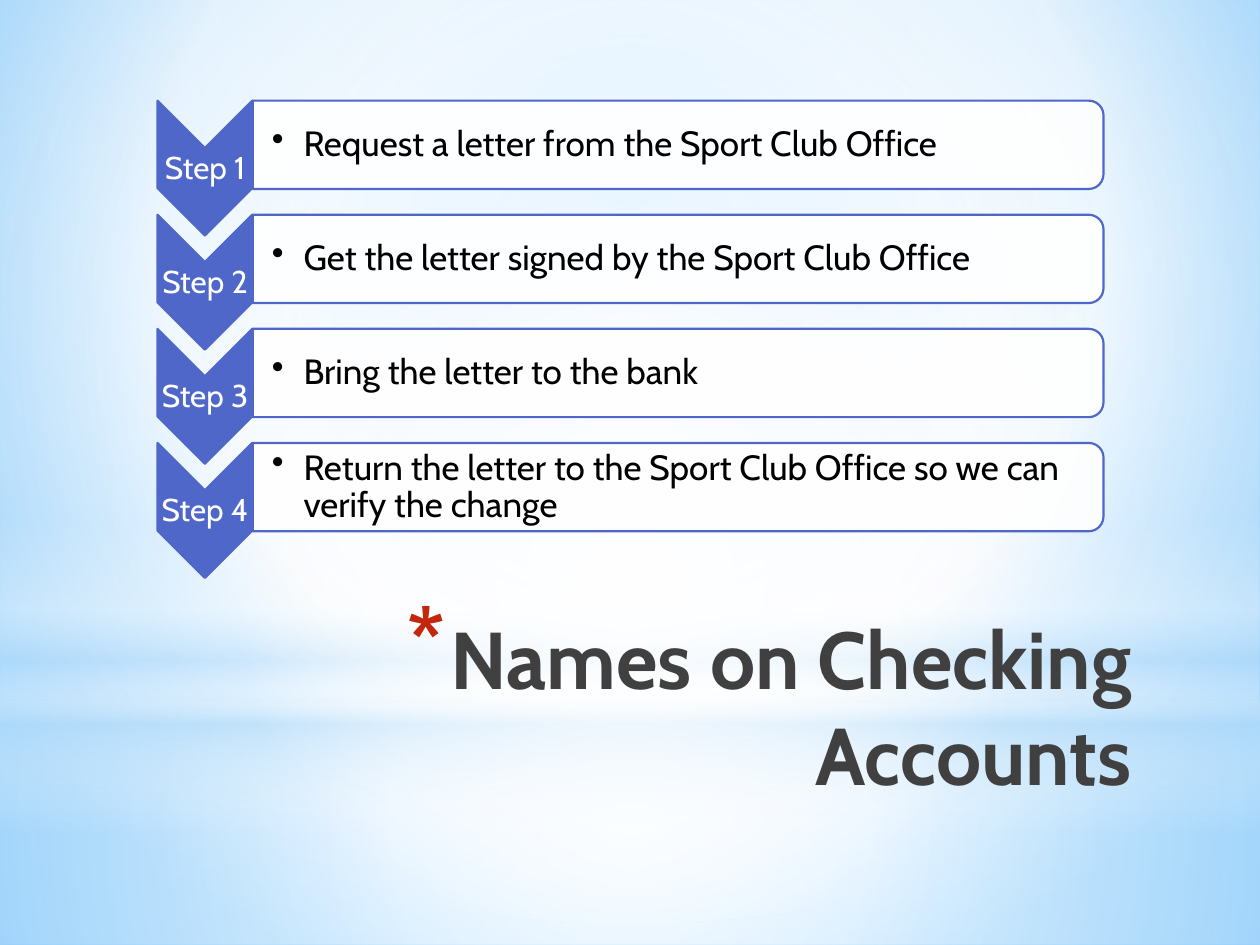
from lxml import etree
from pptx import Presentation
from pptx.dml.color import RGBColor
from pptx.enum.shapes import MSO_SHAPE
from pptx.enum.text import MSO_ANCHOR, PP_ALIGN
from pptx.oxml import parse_xml
from pptx.oxml.ns import nsdecls, qn
from pptx.util import Cm, Pt

RECT, OVAL = MSO_SHAPE.RECTANGLE, MSO_SHAPE.OVAL
CHEVRON, PANEL = MSO_SHAPE.CHEVRON, MSO_SHAPE.ROUND_2_SAME_RECTANGLE
TOP, MIDDLE = MSO_ANCHOR.TOP, MSO_ANCHOR.MIDDLE
LEFT, CENTER, RIGHT = PP_ALIGN.LEFT, PP_ALIGN.CENTER, PP_ALIGN.RIGHT

FONT = "Cabin"
COLORS = {"blue": "4E67C8", "white": "FFFFFF", "black": "000000",
          "title": "404040", "star": "C3260C", "mist": "B4DCFA",
          "sky": "9ED5FF", "deep": "5BB9FF"}

TITLE = "Names on Checking Accounts"
STEPS = ["Request a letter from the Sport Club Office",
         "Get the letter signed by the Sport Club Office",
         "Bring the letter to the bank",
         "Return the letter to the Sport Club Office so we can verify the change"]

# Gradient stops: position %, colour, opacity %
MIDPOINT = (50, 50, 50, 50)
BACKDROP = [(0, "sky", 100), (60, "white", 100), (100, "deep", 100)]
# Layers: shape, top, height, stops, focus (None = vertical gradient)
LAYERS = [
    (RECT, 14.17, 4.88, [(0, "white", 91), (37, "white", 76), (100, "mist", 79)], MIDPOINT),
    (RECT, 0, 14.17, [(0, "white", 89), (48, "white", 62), (100, "mist", 79)], MIDPOINT),
    (RECT, 10.46, 6.35, [(0, "white", 0), (29, "white", 30), (45, "mist", 40),
                         (55, "white", 26), (65, "mist", 60), (100, "white", 0)], None),
    (OVAL, 4.45, 14.17, [(0, "white", 100), (56, "white", 0)], MIDPOINT),
]

WIDTH, HEIGHT = 25.4, 19.05
PITCH = 2.3


def rgb(name):
    return RGBColor.from_string(COLORS[name])


def gradient(stops, focus=None):
    gs = "".join(
        f'<a:gs pos="{pos * 1000}"><a:srgbClr val="{COLORS[c]}">'
        f'<a:alpha val="{alpha * 1000}"/></a:srgbClr></a:gs>'
        for pos, c, alpha in stops)
    if focus:
        sides = " ".join(f'{k}="{v * 1000}"' for k, v in zip("ltrb", focus))
        kind = f'<a:path path="circle"><a:fillToRect {sides}/></a:path>'
    else:
        kind = '<a:lin ang="5400000" scaled="0"/>'
    return parse_xml(f'<a:gradFill {nsdecls("a")} rotWithShape="1">'
                     f'<a:gsLst>{gs}</a:gsLst>{kind}</a:gradFill>')


def add_layer(slide, shape, top, height, stops, focus):
    sp = slide.shapes.add_shape(shape, 0, Cm(top), Cm(WIDTH), Cm(height))
    sp.shadow.inherit = False
    sp.line.fill.background()
    sp._element.spPr.find(qn("a:prstGeom")).addnext(gradient(stops, focus))


def add_turned(slide, shape, cx, cy, length, thickness, fill, opacity=100):
    """Add a shape turned a quarter clockwise about its centre."""
    sp = slide.shapes.add_shape(shape, Cm(cx - length / 2), Cm(cy - thickness / 2),
                                Cm(length), Cm(thickness))
    sp.rotation = 90
    sp.shadow.inherit = False
    sp.fill.solid()
    sp.fill.fore_color.rgb = rgb(fill)
    color = sp._element.spPr.find(qn("a:solidFill"))[0]
    etree.SubElement(color, qn("a:alpha"), val=str(opacity * 1000))
    sp.line.color.rgb = rgb(blue := "blue")
    sp.line.width = Pt(1.25)


def add_text(slide, box, text, size, color, align, anchor, margins, bold=False, spacing=1):
    tb = slide.shapes.add_textbox(*map(Cm, box))
    tf = tb.text_frame
    tf.word_wrap = True
    tf.vertical_anchor = anchor
    tf.margin_left, tf.margin_top, tf.margin_right, tf.margin_bottom = map(Cm, margins)
    p = tf.paragraphs[0]
    p.text = text
    p.alignment = align
    p.line_spacing = spacing
    font = p.runs[0].font
    font.name, font.size, font.bold = FONT, Pt(size), bold
    font.color.rgb = rgb(color)
    return p


def add_bullet(p, char, indent, color, percent=100):
    pPr = p._p.get_or_add_pPr()
    pPr.set("marL", str(Cm(indent)))
    pPr.set("indent", str(-Cm(indent)))
    clr = etree.SubElement(pPr, qn("a:buClr"))
    etree.SubElement(clr, qn("a:srgbClr"), val=COLORS[color])
    etree.SubElement(pPr, qn("a:buSzPct"), val=str(percent * 1000))
    etree.SubElement(pPr, qn("a:buChar"), char=char)


def add_step(slide, i, text):
    y = i * PITCH
    add_turned(slide, CHEVRON, 4.13, 3.39 + y, 2.72, 1.91, "blue")
    add_text(slide, (3.18, 3 + y, 1.91, 0.81), f"Step {i + 1}", 18, "white",
             CENTER, MIDDLE, (0.03,) * 4, spacing=0.9)
    add_turned(slide, PANEL, 13.67, 2.92 + y, 1.78, 17.15, "white", 90)
    p = add_text(slide, (5.08, 2.13 + y, 17.07, 1.6), text, 20, "black",
                 LEFT, MIDDLE, (0.4, 0.03, 0.03, 0.03), spacing=0.9)
    add_bullet(p, "•", 0.64, "black")


def main():
    prs = Presentation()
    prs.slide_width, prs.slide_height = Cm(WIDTH), Cm(HEIGHT)
    slide = prs.slides.add_slide(prs.slide_layouts[6])

    fill = slide.background.fill
    fill.solid()
    bgPr = slide._element.cSld.bg.bgPr
    bgPr.replace(bgPr.find(qn("a:solidFill")), gradient(BACKDROP, (20, 10, 20, 60)))

    for layer in LAYERS:
        add_layer(slide, *layer)
    p = add_text(slide, (4.98, 12.14, 18.08, 3.18), TITLE, 46, "title",
                 RIGHT, TOP, (0.25, 0.13, 0.25, 0.13), bold=True)
    add_bullet(p, "*", 0.89, "star", 128)
    for i, text in enumerate(STEPS):
        add_step(slide, i, text)
    prs.save("out.pptx")


if __name__ == "__main__":
    main()
